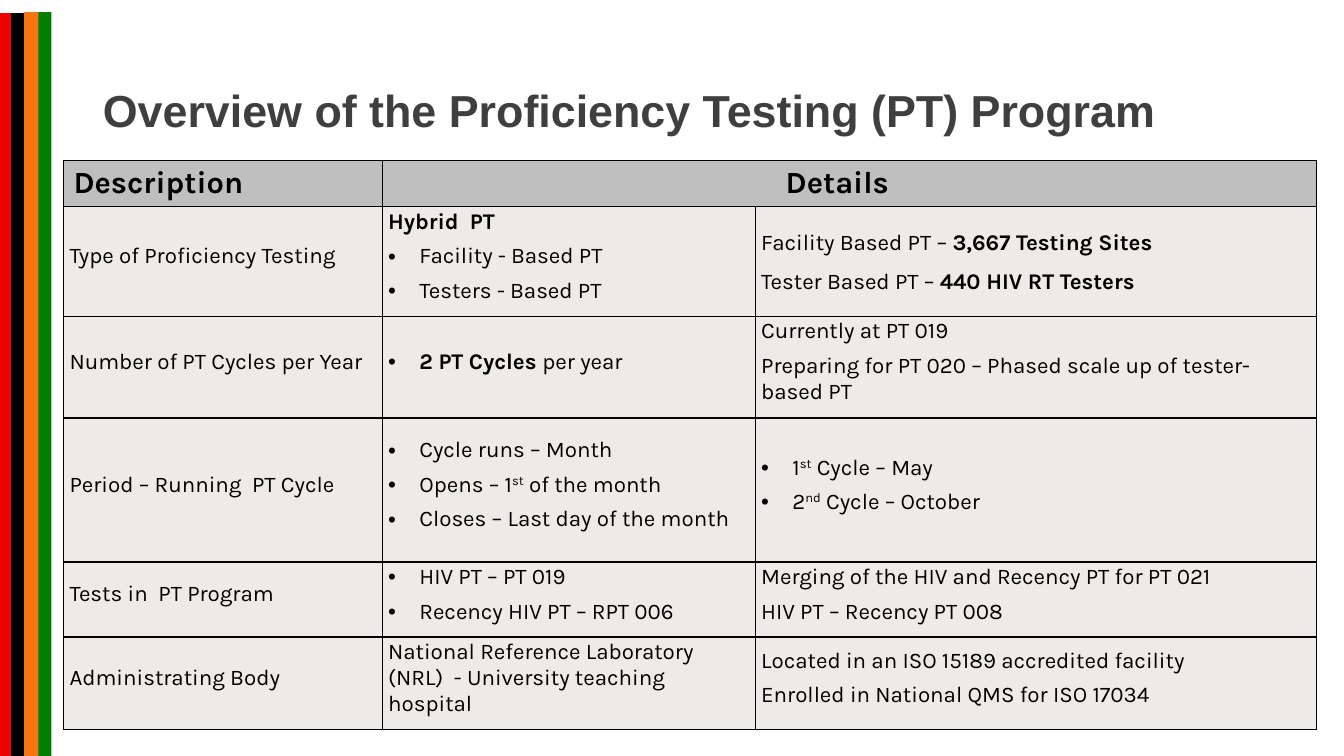
from lxml.etree import SubElement as Sub
from pptx import Presentation
from pptx.dml.color import RGBColor
from pptx.enum.shapes import MSO_SHAPE as Shape
from pptx.enum.text import MSO_ANCHOR as Anchor, PP_ALIGN as Align
from pptx.oxml.ns import qn
from pptx.util import Inches, Pt

BLACK = RGBColor(0x00, 0x00, 0x00)
RED = RGBColor(0xEE, 0x00, 0x00)
ORANGE = RGBColor(0xFA, 0x75, 0x12)
GREEN = RGBColor(0x00, 0x7E, 0x00)
DARK = RGBColor(0x3F, 0x3F, 0x3F)
GRAY = RGBColor(0xBF, 0xBF, 0xBF)
PALE = RGBColor(0xEE, 0xEA, 0xE7)

TITLE = "Overview of the Proficiency Testing (PT) Program"
HEADS = ["Description", "Details"]
ROWS = [
    ("Type of Proficiency Testing",
     [[("Hybrid  PT", "bold")], ["• Facility - Based PT"], ["• Testers - Based PT"]],
     [["Facility Based PT – ", ("3,667 Testing Sites", "bold")],
      ["Tester Based PT – ", ("440 HIV RT Testers", "bold")]]),
    ("Number of PT Cycles per Year",
     [[("• 2 PT Cycles ", "bold"), "per year"]],
     [["Currently at PT 019"],
      ["Preparing for PT 020 – Phased scale up of tester-based PT"]]),
    ("Period – Running  PT Cycle",
     [["• Cycle runs – Month"],
      ["• Opens – 1", ("st", "super"), " of the month"],
      ["• Closes – Last day of the month"]],
     [["• 1", ("st", "super"), " Cycle – May"],
      ["• 2", ("nd", "super"), " Cycle – October"]]),
    ("Tests in  PT Program",
     [["• HIV PT – PT 019"], ["• Recency HIV PT – RPT 006"]],
     [["Merging of the HIV and Recency PT for PT 021"],
      ["HIV PT – Recency PT 008"]]),
    ("Administrating Body",
     [["National Reference Laboratory (NRL)  - University teaching hospital"]],
     [["Located in an ISO 15189 accredited facility"],
      ["Enrolled in National QMS for ISO 17034"]]),
]
STRIPES = [(0.35, 0.12, 0.16, GREEN), (0, 0.13, 0.24, RED),
           (0.11, 0.13, 0.14, BLACK), (0.24, 0.12, 0.14, ORANGE)]
WIDTHS = [3.16, 3.7, 5.57]
HEIGHTS = [0.46, 1.08, 1.01, 1.43, 0.74, 0.92]


def bullet(para):
    props = para._p.get_or_add_pPr()
    props.set("marL", str(Inches(0.31)))
    props.set("indent", str(-Inches(0.31)))
    Sub(Sub(props, qn("a:buClr")), qn("a:srgbClr")).set("val", str(BLACK))
    Sub(props, qn("a:buFont")).set("typeface", "Arial")
    Sub(props, qn("a:buChar")).set("char", "•")


def write(frame, lines, size=16, font="Karla", color=BLACK, bold=False,
          align=Align.LEFT, after=0, space=1):
    for n, line in enumerate(lines):
        para = frame.paragraphs[0] if n == 0 else frame.add_paragraph()
        para.alignment = align
        para.space_before = Pt(0)
        para.space_after = Pt(after)
        para.line_spacing = space
        for part in line:
            text, style = (part, "") if isinstance(part, str) else part
            if text.startswith("• "):
                bullet(para)
                text = text[2:]
            run = para.add_run()
            run.text = text
            run.font.name = font
            run.font.size = Pt(size)
            run.font.bold = bold or style == "bold"
            run.font.color.rgb = color
            if style == "super":
                run.font._element.set("baseline", "30000")


def dress(cell, fill, pads):
    cell.vertical_anchor = Anchor.MIDDLE
    (cell.margin_left, cell.margin_top,
     cell.margin_right, cell.margin_bottom) = map(Inches, pads)
    props = cell._tc.get_or_add_tcPr()
    for side in ("lnL", "lnR", "lnT", "lnB"):
        edge = Sub(props, qn("a:" + side), w=str(Pt(1)))
        Sub(Sub(edge, qn("a:solidFill")), qn("a:srgbClr")).set("val", str(BLACK))
    cell.fill.solid()
    cell.fill.fore_color.rgb = fill


def main():
    deck = Presentation()
    deck.slide_width, deck.slide_height = Inches(13.33), Inches(7.5)
    slide = deck.slides.add_slide(deck.slide_layouts[5])

    for left, top, width, color in STRIPES:
        bar = slide.shapes.add_shape(Shape.RECTANGLE, Inches(left), Inches(top),
                                     Inches(width), Inches(7.5 - top))
        bar.shadow.inherit = False
        bar.fill.solid()
        bar.fill.fore_color.rgb = color
        bar.line.fill.background()

    title = slide.shapes.title
    title.left, title.top = Inches(0.92), Inches(0.4)
    title.width, title.height = Inches(11.5), Inches(1.45)
    title.text_frame.vertical_anchor = Anchor.MIDDLE
    write(title.text_frame, [[TITLE]], size=32, font="Arial", color=DARK,
          bold=True, space=0.9)

    table = slide.shapes.add_table(
        len(HEIGHTS), len(WIDTHS), Inches(0.63), Inches(1.59),
        Inches(sum(WIDTHS)), Inches(sum(HEIGHTS))).table
    table.first_row = table.horz_banding = False
    for col, width in zip(table.columns, WIDTHS):
        col.width = Inches(width)
    for row, height in zip(table.rows, HEIGHTS):
        row.height = Inches(height)

    table.cell(0, 1).merge(table.cell(0, 2))
    for c in range(len(WIDTHS)):
        dress(table.cell(0, c), GRAY, (0.1, 0.03, 0.34 if c else 0.1, 0.03))
    for c, head in enumerate(HEADS):
        write(table.cell(0, c).text_frame, [[head]], size=22, bold=True,
              align=Align.CENTER if c else Align.LEFT)

    for r, (label, *details) in enumerate(ROWS, 1):
        for c, lines in enumerate([[[label]], *details]):
            cell = table.cell(r, c)
            dress(cell, PALE, (0.06, 0.02, 0.08, 0.12))
            wide = (r, c) == (1, 2)
            write(cell.text_frame, lines, after=6 if c and not wide else 0,
                  space=1.5 if wide else 1)

    deck.save("out.pptx")


if __name__ == "__main__":
    main()
